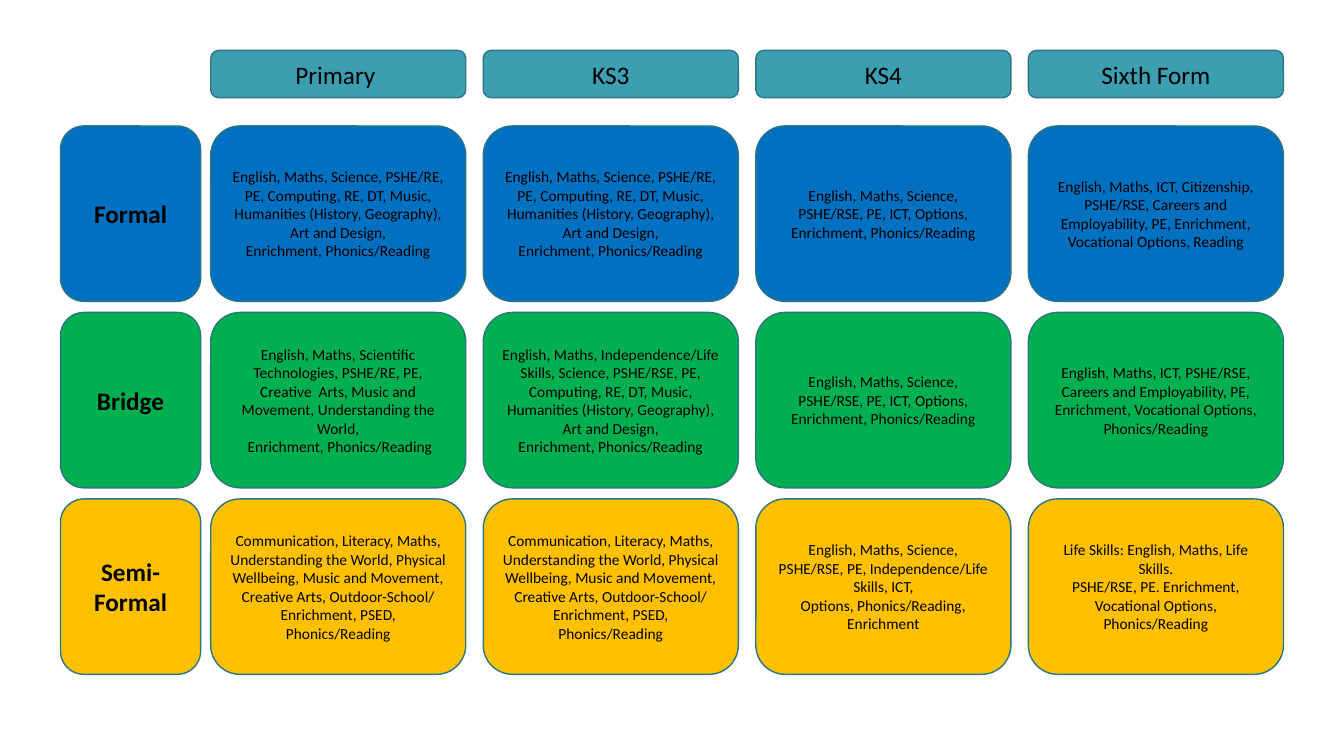
import pptx
import pptx.util
import pptx.dml.color
import pptx.enum.shapes
import pptx.enum.text
from collections import namedtuple
from dataclasses import dataclass

PX = 9144
Box = namedtuple("Box", "left top width height")


@dataclass(frozen=True)
class Theme:
    """Hold the colours and type sizes of the slide."""
    font: str = "Calibri"
    ink: str = "000000"
    line: str = "2C7583"
    head: str = "3B9EB1"
    large: int = 18
    small: int = 11


THEME = Theme()
STAGES = ["Primary~", "KS3", "KS4", "Sixth Form"]
FORMAL = ("English, Maths, Science, PSHE/RE, PE, Computing, RE, DT, Music, "
          "Humanities (History, Geography), Art and Design, "
          "Enrichment,~Phonics/Reading")
SEMI = ("Communication, Literacy, Maths, Understanding the World, Physical "
        "Wellbeing, Music and Movement, Creative~Arts,~Outdoor-School/ "
        "Enrichment, PSED, Phonics/Reading")
PATHS = [
    ("Formal", "0070C0", [
        FORMAL,
        FORMAL,
        "English, Maths, Science, PSHE/RSE, PE, ICT, Options, "
        "Enrichment,~Phonics/Reading",
        "English, Maths, ICT, Citizenship, PSHE/RSE, Careers and "
        "Employability, PE, Enrichment, Vocational Options, Reading",
    ]),
    ("Bridge", "00B050", [
        "English, Maths, Scientific Technologies, PSHE/RE, PE, "
        "Creative~ Arts, Music and Movement, Understanding the World, "
        "~Enrichment,~Phonics/Reading",
        "English, Maths, Independence/Life Skills, Science, PSHE/RSE, PE, "
        "Computing, RE, DT, Music, Humanities (History, Geography), "
        "Art and Design, Enrichment,~Phonics/Reading",
        "English, Maths, Science, PSHE/RSE, PE, ICT, Options, "
        "Enrichment, Phonics/Reading",
        "English, Maths, ICT,~PSHE/RSE, Careers and~Employability, PE, "
        "Enrichment,~Vocational Options, Phonics/Reading",
    ]),
    ("Semi-Formal", "FFC000", [
        SEMI,
        SEMI,
        "English, Maths, Science, PSHE/RSE, PE, Independence/Life Skills, "
        "ICT, Options,~Phonics/Reading, Enrichment",
        "Life Skills:~English, Maths, Life Skills.\n"
        "PSHE/RSE, PE. Enrichment, Vocational Options, Phonics/Reading",
    ]),
]


def colour(code):
    """Return the colour for a hex code."""
    return pptx.dml.color.RGBColor.from_string(code)


def add_card(slide, box, text, fill, size, bold=False):
    """Draw a rounded card with centred text; a tilde is a fixed space."""
    card = slide.shapes.add_shape(
        pptx.enum.shapes.MSO_SHAPE.ROUNDED_RECTANGLE,
        *(round(side * PX) for side in box))
    card.shadow.inherit = False
    card.fill.solid()
    card.fill.fore_color.rgb = colour(fill)
    card.line.color.rgb = colour(THEME.line)
    card.line.width = pptx.util.Pt(1)
    frame = card.text_frame
    frame.word_wrap = True
    frame.vertical_anchor = pptx.enum.text.MSO_ANCHOR.MIDDLE
    frame.text = text.replace("~", chr(160))
    for para in frame.paragraphs:
        para.alignment = pptx.enum.text.PP_ALIGN.CENTER
        for run in para.runs:
            run.font.name = THEME.font
            run.font.size = pptx.util.Pt(size)
            run.font.bold = bold
            run.font.color.rgb = colour(THEME.ink)


def add_row(slide, box, texts, fill, size):
    """Spread equal cards across the box, one for each stage."""
    width = 253
    step = (box.width - width) / (len(texts) - 1)
    for col, text in enumerate(texts):
        place = Box(box.left + col * step, box.top, width, box.height)
        add_card(slide, place, text, fill, size)


def add_grid(slide, box):
    """Stack the pathways down the box, each with its label and cards."""
    label, indent, height = 139, 149, 174
    step = (box.height - height) / (len(PATHS) - 1)
    for row, (name, fill, texts) in enumerate(PATHS):
        top = box.top + row * step
        add_card(slide, Box(box.left, top, label, height), name, fill,
                 THEME.large, True)
        cells = Box(box.left + indent, top, box.width - indent, height)
        add_row(slide, cells, texts, fill, THEME.small)


def main():
    """Build and save the slide."""
    deck = pptx.Presentation()
    deck.slide_width = 1333 * PX
    deck.slide_height = 750 * PX
    slide = deck.slides.add_slide(deck.slide_layouts[6])
    add_row(slide, Box(209, 50, 1064, 47), STAGES, THEME.head, THEME.large)
    add_grid(slide, Box(60, 125, 1213, 544))
    deck.save("out.pptx")


if __name__ == "__main__":
    main()
